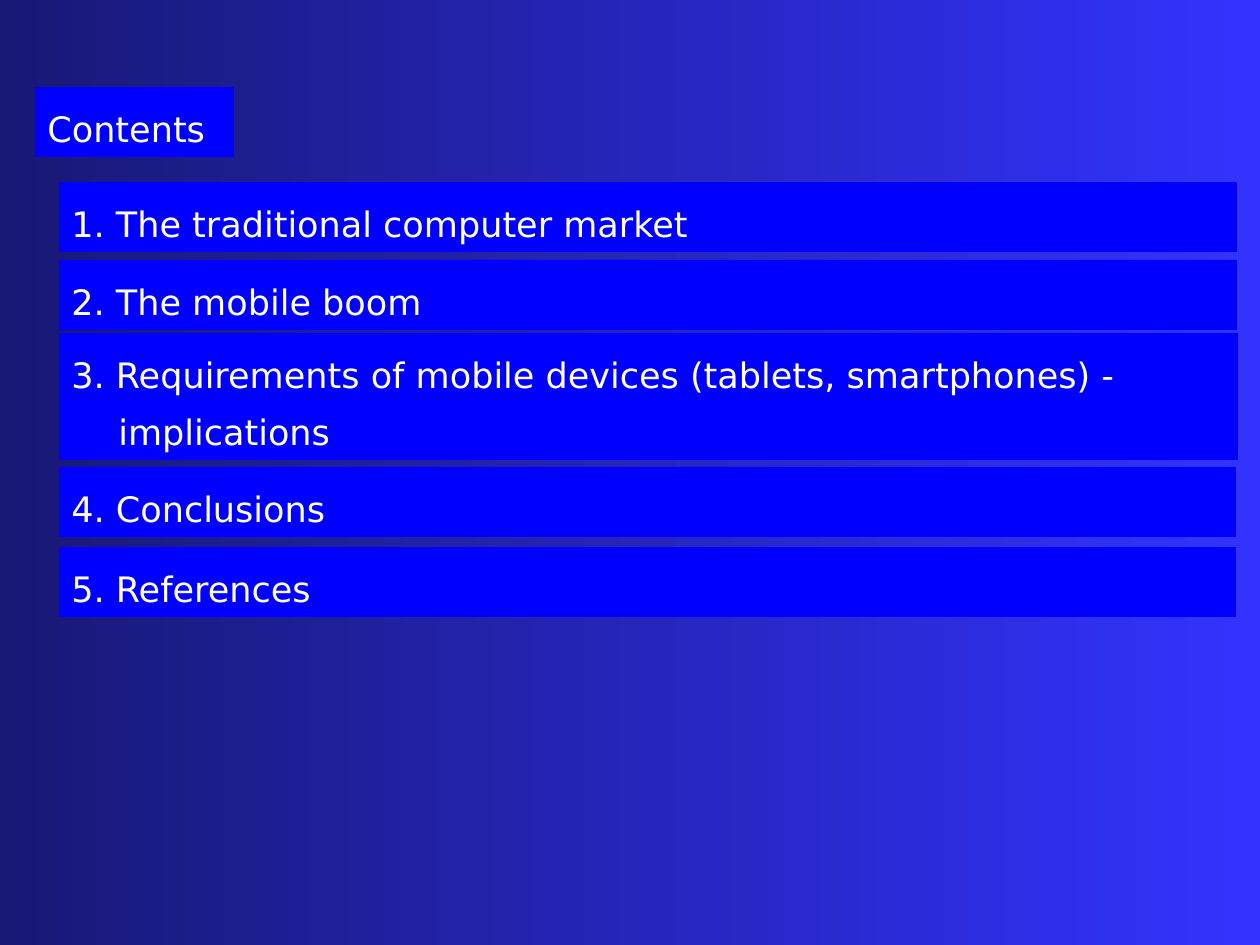
import pptx
import pptx.dml.color
import pptx.enum.shapes
import pptx.enum.text
import pptx.util

PX = 914400 // 126
SLIDE_SIZE = (1260, 945)
BAR_HEIGHT = 70
HANGING_INDENT = 47
COLORS = {"dark": "181876", "light": "3333FF", "bar": "0000FF", "text": "FFFFFF"}

# Text, offset from the top of the list, width, height
ITEMS = [
    ("1. The traditional computer market", 0, 1178, BAR_HEIGHT),
    ("2. The mobile boom", 78, 1178, BAR_HEIGHT),
    ("3. Requirements of mobile devices (tablets, smartphones) - implications",
     151, 1179, 127),
    ("4. Conclusions", 285, 1177, BAR_HEIGHT),
    ("5. References", 365, 1177, BAR_HEIGHT),
]


def color(name):
    return pptx.dml.color.RGBColor.from_string(COLORS[name])


def apply_format(target, values):
    for name, value in values.items():
        setattr(target, name, value)


def paint_background(slide):
    fill = slide.background.fill
    fill.gradient()
    fill.gradient_angle = 0
    for stop, name, position in zip(fill.gradient_stops, ("dark", "light"), (0, 1)):
        stop.color.rgb = color(name)
        stop.position = position


def add_bar(slide, text, left, top, width, height):
    shape = slide.shapes.add_shape(
        pptx.enum.shapes.MSO_SHAPE.RECTANGLE,
        *(value * PX for value in (left, top, width, height)))
    shape.shadow.inherit = False
    shape.fill.solid()
    shape.fill.fore_color.rgb = color("bar")
    shape.line.fill.background()

    frame = shape.text_frame
    apply_format(frame, {
        "word_wrap": True,
        "auto_size": pptx.enum.text.MSO_AUTO_SIZE.SHAPE_TO_FIT_TEXT,
        "vertical_anchor": pptx.enum.text.MSO_ANCHOR.TOP,
    })
    paragraph = frame.paragraphs[0]
    apply_format(paragraph, {
        "text": text,
        "alignment": pptx.enum.text.PP_ALIGN.LEFT,
        "line_spacing": 1.35,
    })
    apply_format(paragraph.runs[0].font, {
        "name": "DejaVu Sans", "size": pptx.util.Pt(20)})
    paragraph.runs[0].font.color.rgb = color("text")

    # Hanging indent for wrapped lines
    properties = paragraph._p.get_or_add_pPr()
    properties.set("marL", str(HANGING_INDENT * PX))
    properties.set("indent", str(-HANGING_INDENT * PX))


def add_contents_list(slide, left, top):
    for text, offset, width, height in ITEMS:
        add_bar(slide, text, left, top + offset, width, height)


def main():
    presentation = pptx.Presentation()
    width, height = SLIDE_SIZE
    apply_format(presentation, {
        "slide_width": pptx.util.Emu(width * PX),
        "slide_height": pptx.util.Emu(height * PX),
    })
    slide = presentation.slides.add_slide(presentation.slide_layouts[6])
    paint_background(slide)

    # Heading
    add_bar(slide, "Contents", 35, 87, 199, BAR_HEIGHT)
    # Numbered sections
    add_contents_list(slide, 59, 182)
    presentation.save("out.pptx")


if __name__ == "__main__":
    main()
